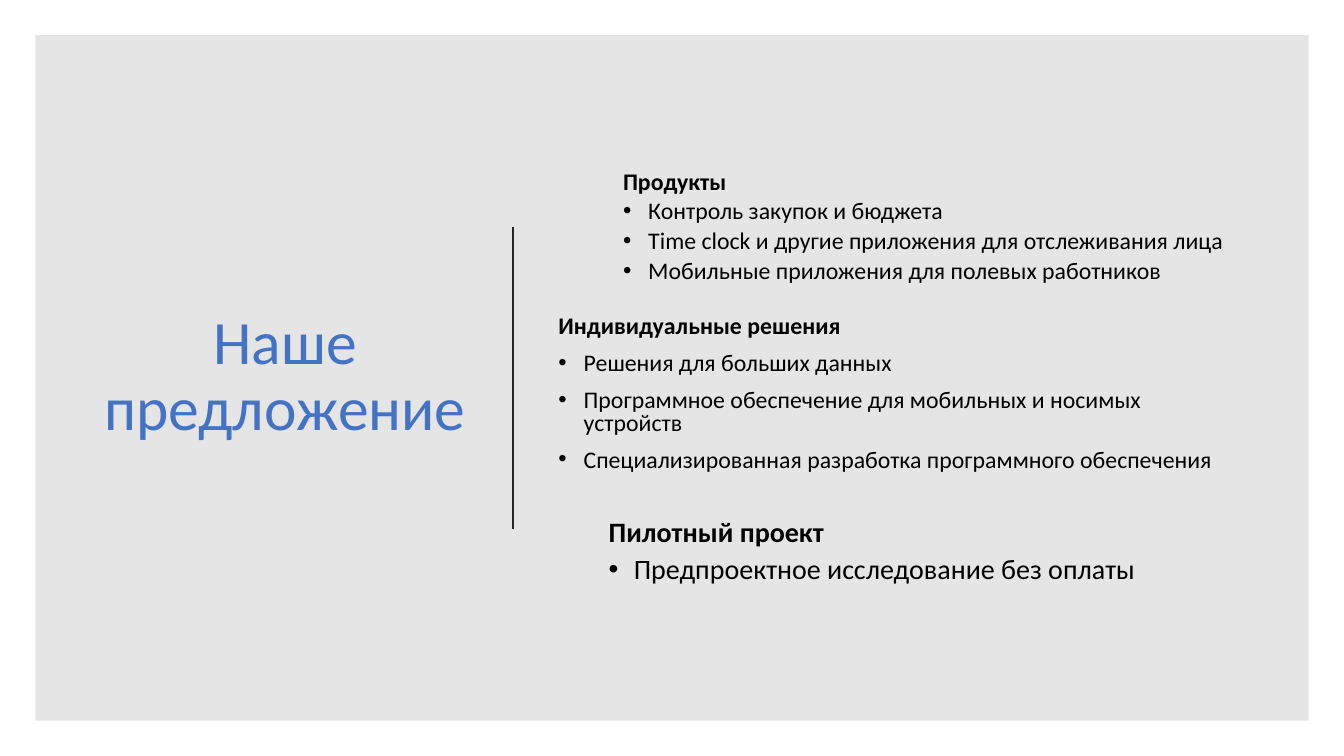
"""Build the offer slide: a title beside three lists on a grey panel."""
import dataclasses
import lxml.etree
import pptx
import pptx.dml.color
import pptx.enum.shapes
import pptx.enum.text
import pptx.oxml.ns
import pptx.util


@dataclasses.dataclass(frozen=True)
class Theme:
    font: str = "Calibri"
    black: str = "000000"
    blue: str = "4472C4"
    rule: str = "262626"
    title: int = 44
    list: int = 17
    pilot: int = 20


theme = Theme()
Pt = pptx.util.Pt
qn = pptx.oxml.ns.qn
color = pptx.dml.color.RGBColor.from_string
Anchor = pptx.enum.text.MSO_ANCHOR


def place(shape, box, anchor):
    shape.left, shape.top, shape.width, shape.height = map(Pt, box)
    frame = shape.text_frame
    frame.word_wrap = True
    frame.auto_size = pptx.enum.text.MSO_AUTO_SIZE.NONE
    frame.vertical_anchor = anchor
    return frame


def style(para, size, tint, bold, lead):
    para.line_spacing = lead
    para.font.name = theme.font
    para.font.size = Pt(size)
    para.font.color.rgb = color(tint)
    para.font.bold = bold


deck = pptx.Presentation()
deck.slide_width, deck.slide_height = Pt(960), Pt(540)
slide = deck.slides.add_slide(deck.slide_layouts[3])
title, top, mid = slide.placeholders

panel = slide.shapes.add_shape(
    pptx.enum.shapes.MSO_SHAPE.RECTANGLE, Pt(25.2), Pt(25.2), Pt(909.6), Pt(489.6))
panel.shadow.inherit = False
panel.fill.solid()
panel.fill.fore_color.rgb = color(theme.black)
tint = panel.element.spPr.find(qn("a:solidFill"))[0]
lxml.etree.SubElement(tint, qn("a:alpha"), val="10000")
panel.line.fill.background()
title.element.addprevious(panel.element)

frame = place(title, (66.2, 75.6, 275, 388), Anchor.MIDDLE)
frame.text = "Наше предложение"
para = frame.paragraphs[0]
para.alignment = pptx.enum.text.PP_ALIGN.CENTER
style(para, theme.title, theme.blue, False, 0.9)

rule = slide.shapes.add_connector(
    pptx.enum.shapes.MSO_CONNECTOR.STRAIGHT, Pt(366.5), Pt(162), Pt(366.5), Pt(378))
rule.line.color.rgb = color(theme.rule)
rule.line.width = Pt(1.5)
lxml.etree.SubElement(rule.element.spPr, qn("a:effectLst"))

pilot = slide.shapes.add_textbox(0, 0, 0, 0)
groups = [
    (top, (401.8, 25.2, 492.5, 181.4), Anchor.BOTTOM, 1, theme.list, 0.8, 5, [
        "Продукты",
        "Контроль закупок и бюджета",
        "Time clock и другие приложения для отслеживания лица",
        "Мобильные приложения для полевых работников"]),
    (mid, (391.7, 222.5, 492.5, 128.2), Anchor.TOP, 0, theme.list, 0.8, 10, [
        "Индивидуальные решения",
        "Решения для больших данных",
        "Программное обеспечение для мобильных и носимых устройств",
        "Специализированная разработка программного обеспечения"]),
    (pilot, (391.7, 366.5, 492.5, 128.2), Anchor.TOP, 1, theme.pilot, 0.9, 5, [
        "Пилотный проект",
        "Предпроектное исследование без оплаты"]),
]
for shape, box, anchor, level, size, lead, gap, lines in groups:
    frame = place(shape, box, anchor)
    frame.text = "\n".join(lines)
    for row, para in enumerate(frame.paragraphs):
        head = row == 0
        hang = 0 if head else 18
        props = para._p.get_or_add_pPr()
        props.set("marL", str(Pt(36 * level + hang)))
        props.set("indent", str(Pt(-hang)))
        if head:
            lxml.etree.SubElement(props, qn("a:buNone"))
        else:
            lxml.etree.SubElement(props, qn("a:buFont"), typeface="Arial")
            lxml.etree.SubElement(props, qn("a:buChar"), char="•")
        para.level = level
        para.space_before = Pt(gap)
        style(para, size, theme.black, head, lead)

deck.save("out.pptx")
